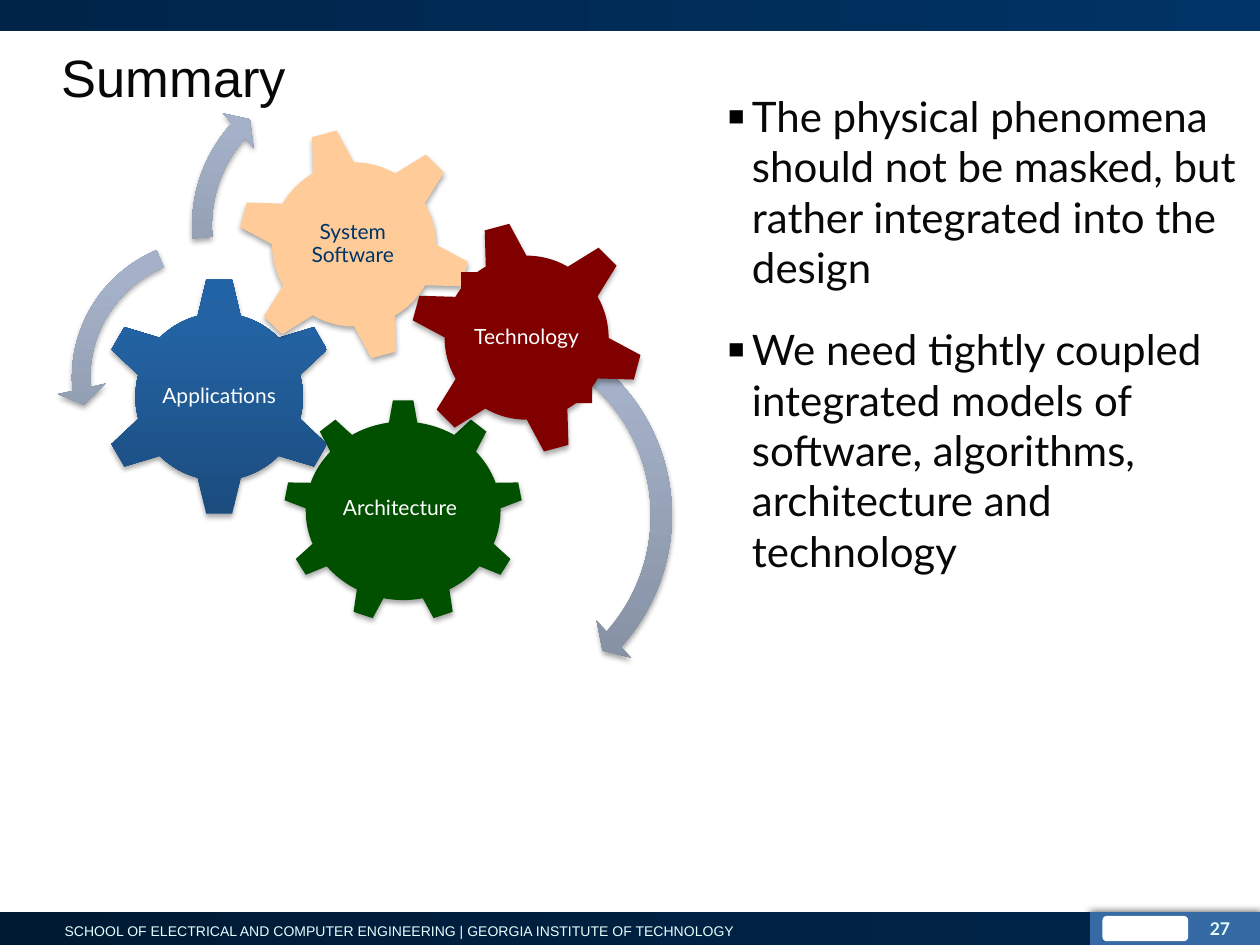
from dataclasses import dataclass
from typing import Optional, Union

from pptx import Presentation
from pptx.dml.color import RGBColor
from pptx.enum.shapes import MSO_SHAPE
from pptx.enum.text import MSO_ANCHOR, PP_ALIGN
from pptx.oxml import parse_xml
from pptx.oxml.ns import nsdecls, qn
from pptx.util import Inches, Pt


@dataclass(frozen=True)
class Gradient:
    stops: tuple[tuple[int, str], ...]
    angle: int = 0


@dataclass(frozen=True)
class Shadow:
    color: str = "000000"
    opacity: int = 35
    blur: float = 3.15
    distance: float = 1.8
    direction: int = 90


@dataclass(frozen=True)
class Block:
    kind: MSO_SHAPE
    left: float
    top: float
    width: float
    height: float
    fill: Union[str, Gradient]
    rotation: float = 0
    shadow: Optional[Shadow] = None
    adjustments: tuple[float, ...] = ()


@dataclass(frozen=True)
class Label:
    text: str
    left: float
    top: float
    width: float
    height: float
    color: str = "FFFFFF"


SOFT = Shadow()
BLUE = Gradient(((0, "1B4C7E"), (80, "2363A3"), (100, "2063A6")), 270)
STEEL = Gradient(((0, "7F899A"), (80, "A4B1C8"), (100, "A5B2C9")), 270)

FRAME = [
    Block(MSO_SHAPE.RECTANGLE, 8.64, 7.24, 1.36, 0.26, "366AA4",
          shadow=Shadow(opacity=75, blur=5, distance=1, direction=0)),
    Block(MSO_SHAPE.ROUNDED_RECTANGLE, 8.75, 7.27, 0.68, 0.2, "FFFFFF"),
    Block(MSO_SHAPE.RECTANGLE, 0, 7.24, 8.65, 0.26, Gradient(((0, "001A34"), (100, "002448")))),
    Block(MSO_SHAPE.RECTANGLE, 0, 0, 10, 0.25, Gradient(((0, "002448"), (100, "003366")))),
]

DIAGRAM = [
    Block(MSO_SHAPE.GEAR_9, 2.25, 3.17, 1.9, 1.77, "005000", shadow=SOFT),
    Label("Architecture", 2.6, 3.58, 1.15, 0.91),
    Block(MSO_SHAPE.GEAR_6, 0.79, 2.2, 1.9, 1.9, BLUE, shadow=SOFT),
    Label("Applications", 1.22, 2.68, 1.04, 0.94),
    Block(MSO_SHAPE.GEAR_6, 1.88, 1.01, 1.86, 1.86, "FFCC99", -15, SOFT),
    Label("System Software", 2.28, 1.42, 1.04, 1.04, "003366"),
    Block(MSO_SHAPE.CIRCULAR_ARROW, 2.11, 2.42, 3.34, 3.34, STEEL, shadow=SOFT,
          adjustments=(0.05, 2.99, 25.2, 158.54, 0.06)),
    Block(MSO_SHAPE.LEFT_CIRCULAR_ARROW, 0.45, 1.78, 2.43, 2.43, STEEL, shadow=SOFT,
          adjustments=(0.06, 4.3, 104.89, 148.38, 0.08)),
    Block(MSO_SHAPE.CIRCULAR_ARROW, 1.42, 0.48, 2.62, 2.62, STEEL, shadow=SOFT,
          adjustments=(0.06, 3.94, 133.14, 105.08, 0.07)),
    Block(MSO_SHAPE.GEAR_6, 3.25, 1.75, 1.86, 1.86, "800000", -15, SOFT),
    Block(MSO_SHAPE.RECTANGLE, 3.66, 2.16, 1.04, 1.04, "800000"),
    Label("Technology", 3.66, 2.16, 1.04, 1.04),
]

POINTS = [
    "The physical phenomena should not be masked, but rather integrated into the design",
    "We need tightly coupled integrated models of software, algorithms, architecture and technology",
]


def rgb(color: str) -> RGBColor:
    return RGBColor.from_string(color)


def write(para, text: str, *, size: float, color: str, font: str = "Lato",
          bold: bool = False, align=PP_ALIGN.LEFT) -> None:
    para.alignment = align
    span = para.add_run()
    span.text = text
    span.font.name = font
    span.font.size = Pt(size)
    span.font.bold = bold
    span.font.color.rgb = rgb(color)


def add_box(page, left: float, top: float, width: float, height: float, wrap: bool = True):
    box = page.shapes.add_textbox(Inches(left), Inches(top), Inches(width), Inches(height))
    box.text_frame.word_wrap = wrap
    return box.text_frame


def apply_gradient(shape, gradient: Gradient) -> None:
    shape.fill.gradient()
    properties = shape._element.spPr
    stops = "".join(
        f'<a:gs pos="{place * 1000}"><a:srgbClr val="{color}"/></a:gs>'
        for place, color in gradient.stops
    )
    properties.replace(properties.find(qn("a:gradFill")), parse_xml(
        f'<a:gradFill {nsdecls("a")} rotWithShape="1"><a:gsLst>{stops}</a:gsLst>'
        f'<a:lin ang="{gradient.angle * 60000}" scaled="0"/></a:gradFill>'
    ))


def apply_shadow(shape, shadow: Shadow) -> None:
    effects = shape._element.spPr.find(qn("a:effectLst"))
    effects.append(parse_xml(
        f'<a:outerShdw {nsdecls("a")} blurRad="{int(Pt(shadow.blur))}" '
        f'dist="{int(Pt(shadow.distance))}" dir="{shadow.direction * 60000}" rotWithShape="0">'
        f'<a:srgbClr val="{shadow.color}"><a:alpha val="{shadow.opacity * 1000}"/></a:srgbClr>'
        f'</a:outerShdw>'
    ))


def draw_block(page, block: Block) -> None:
    shape = page.shapes.add_shape(block.kind, Inches(block.left), Inches(block.top),
                                  Inches(block.width), Inches(block.height))
    for index, value in enumerate(block.adjustments):
        shape.adjustments[index] = value
    shape.rotation = block.rotation
    shape.line.fill.background()
    shape.shadow.inherit = False
    if isinstance(block.fill, Gradient):
        apply_gradient(shape, block.fill)
    else:
        shape.fill.solid()
        shape.fill.fore_color.rgb = rgb(block.fill)
    if block.shadow:
        apply_shadow(shape, block.shadow)


def draw_label(page, label: Label) -> None:
    frame = add_box(page, label.left, label.top, label.width, label.height)
    frame.vertical_anchor = MSO_ANCHOR.MIDDLE
    frame.margin_left = frame.margin_right = Inches(0.02)
    frame.margin_top = frame.margin_bottom = Inches(0.02)
    para = frame.paragraphs[0]
    para.line_spacing = 0.9
    write(para, label.text, size=12, color=label.color, align=PP_ALIGN.CENTER)


def add_bullet(para) -> None:
    para.space_before = Pt(18)
    properties = para._p.get_or_add_pPr()
    properties.set("marL", str(Inches(0.19)))
    properties.set("indent", str(-Inches(0.19)))
    for markup in ('<a:buClr {}><a:srgbClr val="000000"/></a:buClr>', '<a:buSzPct {} val="65000"/>',
                   '<a:buFont {} typeface="Arial"/>', '<a:buChar {} char="■"/>'):
        properties.append(parse_xml(markup.format(nsdecls("a"))))


def draw_points(page, points: list[str]) -> None:
    frame = add_box(page, 5.68, 0.67, 4.24, 4.07)
    for index, point in enumerate(points):
        para = frame.add_paragraph() if index else frame.paragraphs[0]
        write(para, point, size=24, color="080808")
        add_bullet(para)


def draw_title(page, text: str) -> None:
    title = page.shapes.title
    title.left, title.top, title.width, title.height = map(Inches, (0.39, 0.24, 9.3, 0.74))
    title.text_frame.vertical_anchor = MSO_ANCHOR.MIDDLE
    write(title.text_frame.paragraphs[0], text, size=30, color="080808", font="Arial")


def main() -> None:
    deck = Presentation()
    deck.slide_width, deck.slide_height = Inches(10), Inches(7.5)
    page = deck.slides.add_slide(deck.slide_layouts[5])
    draw_title(page, "Summary")
    for block in FRAME:
        draw_block(page, block)
    footer = add_box(page, 0.41, 7.27, 5.53, 0.23, wrap=False)
    write(footer.paragraphs[0],
          "SCHOOL OF ELECTRICAL AND COMPUTER ENGINEERING | GEORGIA INSTITUTE OF TECHNOLOGY",
          size=8, color="E5FFFF", font="Arial", align=PP_ALIGN.CENTER)
    for item in DIAGRAM:
        if isinstance(item, Block):
            draw_block(page, item)
        else:
            draw_label(page, item)
    number = add_box(page, 9.44, 7.24, 0.42, 0.23)
    write(number.paragraphs[0], "27", size=10, color="E5FFFF", bold=True, align=PP_ALIGN.RIGHT)
    draw_points(page, POINTS)
    deck.save("out.pptx")


if __name__ == "__main__":
    main()
